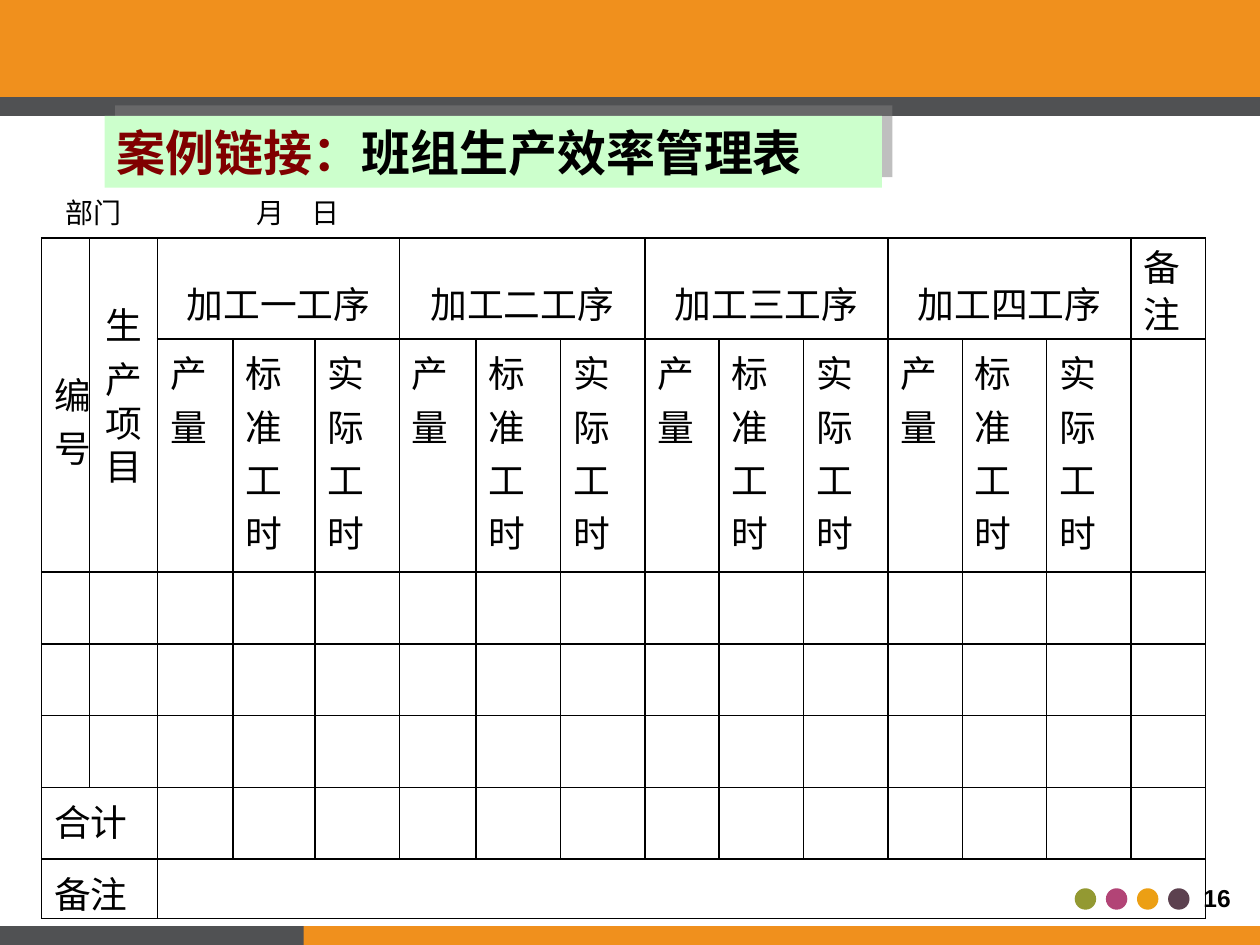
import pptx
import pptx.util
import pptx.dml.color
import pptx.enum.shapes
import pptx.enum.text
import pptx.oxml
import pptx.oxml.ns
from lxml import etree

Inches, Pt = pptx.util.Inches, pptx.util.Pt
SHAPE = pptx.enum.shapes.MSO_SHAPE
CENTER = pptx.enum.text.PP_ALIGN.CENTER
MIDDLE = pptx.enum.text.MSO_ANCHOR.MIDDLE
qn = pptx.oxml.ns.qn

CJK = "Noto Sans CJK SC"
ORANGE, GRAY, BLACK = "F0901D", "505153", "000000"
DOTS = ["939932", "B24476", "EC9F14", "5C414F"]
BARS = [
    (0, 0, 10, 0.77, ORANGE),
    (0, 0.77, 10, 0.15, GRAY),
    (1.95, 7.35, 8.05, 0.15, ORANGE),
    (0, 7.35, 2.41, 0.15, GRAY),
]
TITLE = [("案例链接：", "800000"), ("班组生产效率管理表", BLACK)]
FORM_LINE = "部门\t月\t日"
FORM_TABS = [1.52, 1.95]
PROCESSES = ["加工一工序", "加工二工序", "加工三工序", "加工四工序"]
MEASURES = ["产量", "标准\n工时", "实际\n工时"]
COLUMN_WIDTHS = [0.38, 0.54, 0.6, 0.65, 0.67, 0.61, 0.67, 0.67,
                 0.59, 0.67, 0.67, 0.59, 0.67, 0.67, 0.59]
ROW_HEIGHTS = [0.8, 1.85, 0.57, 0.57, 0.57, 0.57, 0.47]


def rgb(value):
    return pptx.dml.color.RGBColor.from_string(value)


def style_run(run, size, color=BLACK, face=CJK, bold=False):
    run.font.size = Pt(size)
    run.font.name = face
    run.font.bold = bold
    run.font.color.rgb = rgb(color)
    etree.SubElement(run.font._element, qn("a:ea"), typeface=face)


def add_block(slide, kind, left, top, width, height, color):
    block = slide.shapes.add_shape(
        kind, Inches(left), Inches(top), Inches(width), Inches(height))
    block.shadow.inherit = False
    block.fill.solid()
    block.fill.fore_color.rgb = rgb(color)
    block.line.fill.background()
    return block


def add_shadow(block, color, alpha, blur, distance, angle):
    effects = block._element.spPr.find(qn("a:effectLst"))
    shadow = etree.SubElement(
        effects, qn("a:outerShdw"), blurRad=str(Pt(blur)), dist=str(Pt(distance)),
        dir=str(angle * 60000), algn="ctr", rotWithShape="0")
    tint = etree.SubElement(shadow, qn("a:srgbClr"), val=color)
    etree.SubElement(tint, qn("a:alpha"), val=str(alpha * 1000))


def add_borders(cell):
    properties = cell._tc.get_or_add_tcPr()
    for side in ("lnL", "lnR", "lnT", "lnB"):
        border = etree.SubElement(properties, qn("a:" + side), w=str(Pt(1)))
        fill = etree.SubElement(border, qn("a:solidFill"))
        etree.SubElement(fill, qn("a:srgbClr"), val=BLACK)


def write_cell(cell, text, top=0.05, align=None, spacings=()):
    cell.text_frame.text = text
    cell.margin_top = Inches(top)
    cell.margin_bottom = 0
    for paragraph in cell.text_frame.paragraphs:
        paragraph.alignment = align
        for run in paragraph.runs:
            style_run(run, 21)
    for paragraph, spacing in zip(cell.text_frame.paragraphs, spacings):
        paragraph.line_spacing = spacing


def add_efficiency_table(slide):
    table = slide.shapes.add_table(
        len(ROW_HEIGHTS), len(COLUMN_WIDTHS), Inches(0.33), Inches(1.89),
        Inches(sum(COLUMN_WIDTHS)), Inches(sum(ROW_HEIGHTS))).table
    table.first_row = table.horz_banding = False
    for column, width in zip(table.columns, COLUMN_WIDTHS):
        column.width = Inches(width)
    for row, height in zip(table.rows, ROW_HEIGHTS):
        row.height = Inches(height)
    for cell in table.iter_cells():
        add_borders(cell)
        cell.fill.background()

    last_row, last_column = len(ROW_HEIGHTS) - 1, len(COLUMN_WIDTHS) - 1
    for column in (0, 1):
        table.cell(0, column).merge(table.cell(1, column))
    for row, label in ((last_row - 1, "合计"), (last_row, "备注")):
        table.cell(row, 0).merge(table.cell(row, 1))
        write_cell(table.cell(row, 0), label)
    table.cell(last_row, 2).merge(table.cell(last_row, last_column))

    write_cell(table.cell(0, 0), "编\n号", top=1.02)
    write_cell(table.cell(0, 1), "生产\n项目", 0.47, CENTER, (1.0, 0.8))
    write_cell(table.cell(0, last_column), "备注", spacings=(0.88,))
    for index, process in enumerate(PROCESSES):
        first = 2 + index * len(MEASURES)
        table.cell(0, first).merge(table.cell(0, first + len(MEASURES) - 1))
        write_cell(table.cell(0, first), process, 0.3, CENTER)
        for offset, measure in enumerate(MEASURES):
            write_cell(table.cell(1, first + offset), measure)


def add_form_line(slide):
    form = slide.shapes.add_textbox(
        Inches(0.42), Inches(1.5), Inches(4.01), Inches(0.37)).text_frame
    form.word_wrap = True
    form.vertical_anchor = MIDDLE
    paragraph = form.paragraphs[0]
    stops = etree.SubElement(paragraph._p.get_or_add_pPr(), qn("a:tabLst"))
    for position in FORM_TABS:
        etree.SubElement(stops, qn("a:tab"), pos=str(Inches(position)), algn="l")
    paragraph.text = FORM_LINE
    for run in paragraph.runs:
        style_run(run, 16)


def add_title(slide):
    title = add_block(slide, SHAPE.RECTANGLE, 0.83, 0.92, 6.17, 0.57, "CCFFCC")
    add_shadow(title, "808080", 50, 0, 8.5, 315)
    title.text_frame.word_wrap = True
    title.text_frame.vertical_anchor = MIDDLE
    paragraph = title.text_frame.paragraphs[0]
    paragraph.alignment = pptx.enum.text.PP_ALIGN.LEFT
    for text, color in TITLE:
        run = paragraph.add_run()
        run.text = text
        style_run(run, 28, color, bold=True)


def add_page_number(slide):
    number = slide.shapes.add_textbox(
        Inches(9.44), Inches(6.96), Inches(0.44), Inches(0.34)).text_frame
    number.word_wrap = False
    number.text = "16"
    number.paragraphs[0].alignment = CENTER
    style_run(number.paragraphs[0].runs[0], 14, face="Arial", bold=True)


def main():
    deck = pptx.Presentation()
    deck.slide_width, deck.slide_height = Inches(10), Inches(7.5)
    slide = deck.slides.add_slide(deck.slide_layouts[6])
    for index, color in enumerate(DOTS):
        add_block(slide, SHAPE.OVAL, 8.53 + index * 0.247, 7.05, 0.17, 0.17, color)
    add_page_number(slide)
    bars = [add_block(slide, SHAPE.RECTANGLE, *bar) for bar in BARS]
    add_shadow(bars[0], BLACK, 30, 4.5, 2.6, 53)
    add_form_line(slide)
    add_efficiency_table(slide)
    add_title(slide)
    deck.save("out.pptx")


if __name__ == "__main__":
    main()
